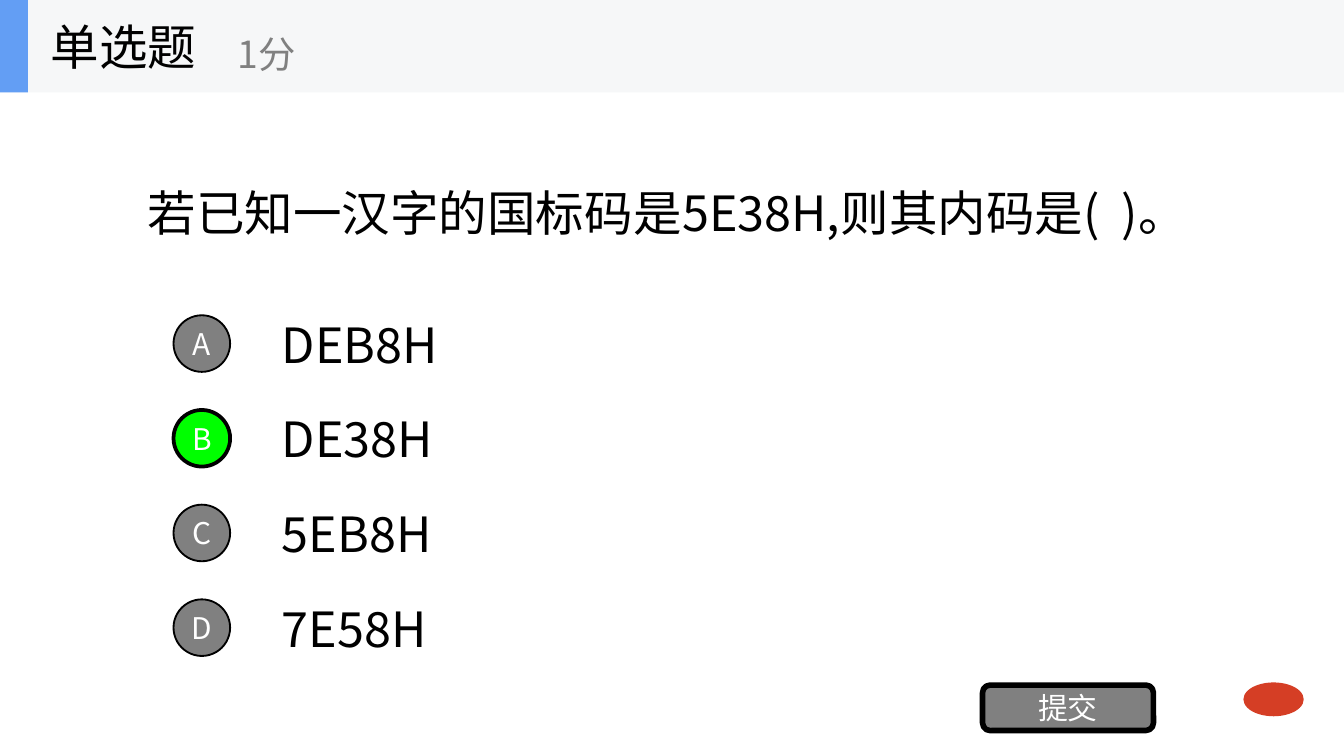
from lxml.etree import SubElement
from pptx import Presentation
from pptx.dml.color import RGBColor
from pptx.enum.shapes import MSO_SHAPE
from pptx.enum.text import MSO_ANCHOR, PP_ALIGN
from pptx.oxml.ns import qn
from pptx.util import Cm, Pt

FACE = "Noto Sans CJK SC"
BLACK, GREY, WHITE = "000000", "808080", "FFFFFF"

# text, (left, top, width, height) in cm, size, colour
TEXTS = [
    ("若已知一汉字的国标码是5E38H,则其内码是(  )。", (2.54, 3.33, 20.57, 1.35), 26, BLACK),
    ("单选题", (0.71, 0, 5.28, 1.75), 26, BLACK),
    ("1分", (4.24, 0.3, 6.35, 1.42), 20, GREY),
]
# fill, (left, top, width, height) in cm
BARS = [
    ("F6F7F8", (0, 0, 25.4, 1.75)),
    ("639EF4", (0, 0, 0.53, 1.75)),
]
# letter, answer, fill, line width
CHOICES = [
    ("A", "DEB8H", GREY, 1),
    ("B", "DE38H", "00FF00", 2),
    ("C", "5EB8H", GREY, 1),
    ("D", "7E58H", GREY, 1),
]
TOP, STEP, ROW, DOT = 5.82, 1.79, 1.35, 1.07
SUBMIT = ("提交", (18.57, 12.95, 3.23, 0.86))
BADGE = ("D53E25", (23.5, 12.9, 1.14, 0.64))


def color(code):
    return RGBColor.from_string(code)


def write(shape, text, size, code, align, margins):
    frame = shape.text_frame
    form = {"word_wrap": True, "vertical_anchor": MSO_ANCHOR.MIDDLE, **margins}
    for key, value in form.items():
        setattr(frame, key, value)
    para = frame.paragraphs[0]
    para.alignment = align
    run = para.add_run()
    run.text = text
    for key, value in {"size": Pt(size), "name": FACE}.items():
        setattr(run.font, key, value)
    run.font.color.rgb = color(code)
    SubElement(run.font._element, qn("a:ea"), typeface=FACE)


def label(text, box, size, code):
    shape = slide.shapes.add_textbox(*map(Cm, box))
    write(shape, text, size, code, PP_ALIGN.LEFT, {})


def block(kind, box, fill, line=0, text=""):
    """Add a filled shape, outlined and lettered when asked."""
    shape = slide.shapes.add_shape(kind, *map(Cm, box))
    shape.shadow.inherit = False
    shape.fill.solid()
    shape.fill.fore_color.rgb = color(fill)
    if line:
        shape.line.color.rgb = color(BLACK)
        shape.line.width = Pt(line)
    else:
        shape.line.fill.background()
    if text:
        sides = ("left", "right", "top", "bottom")
        write(shape, text, 16, WHITE, PP_ALIGN.CENTER,
              {f"margin_{side}": 0 for side in sides})


deck = Presentation()
deck.slide_width, deck.slide_height = Cm(25.4), Cm(14.29)
slide = deck.slides.add_slide(deck.slide_layouts[6])

for fill, box in BARS:
    block(MSO_SHAPE.RECTANGLE, box, fill)
for item in TEXTS:
    label(*item)
for row, (letter, answer, fill, line) in enumerate(CHOICES):
    top = TOP + row * STEP
    label(answer, (5.08, top, 3.81, ROW), 26, BLACK)
    dot = (3.28, top + (ROW - DOT) / 2, DOT, DOT)
    block(MSO_SHAPE.OVAL, dot, fill, line, letter)
text, box = SUBMIT
block(MSO_SHAPE.ROUNDED_RECTANGLE, box, GREY, 3, text)
fill, box = BADGE
block(MSO_SHAPE.OVAL, box, fill)

deck.save("out.pptx")
